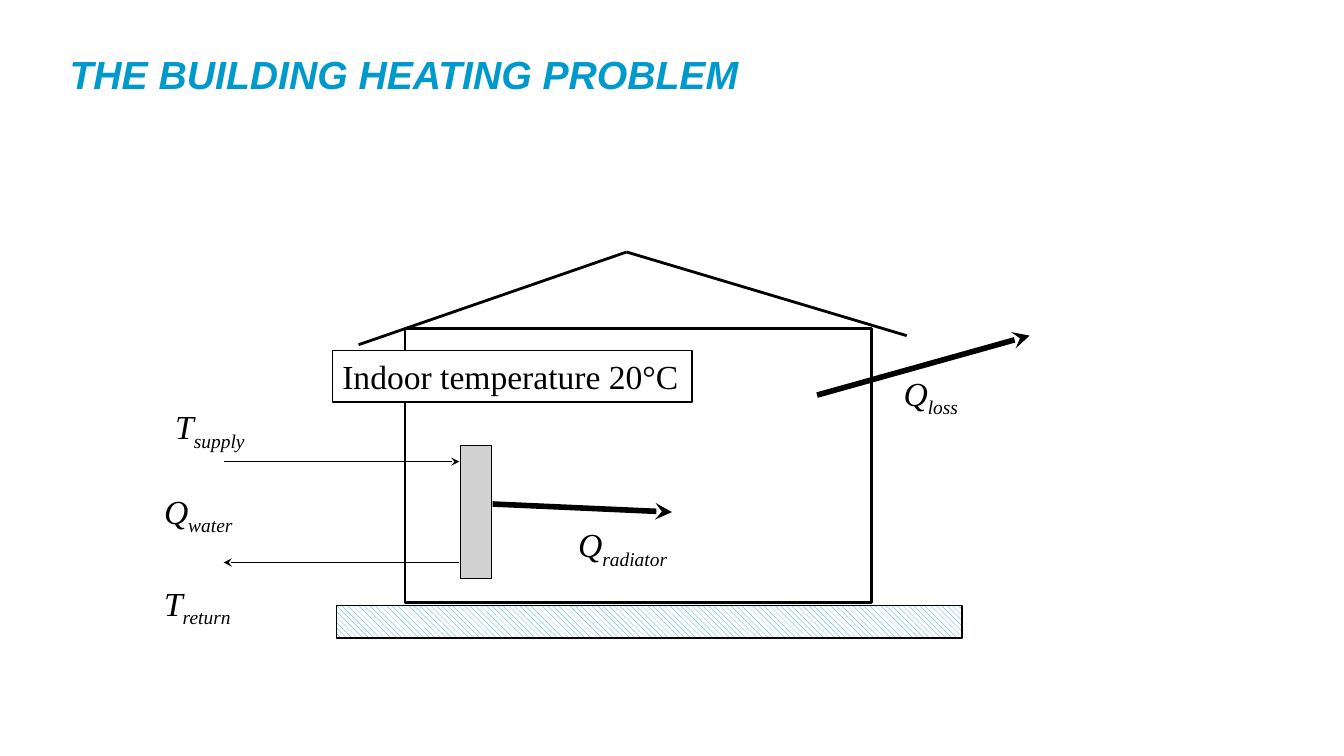
"""Build the slide that shows the heat flows of a heated building."""
from pptx import Presentation
from pptx import util as u
from pptx.dml import color
from pptx.enum import dml, shapes, text
from pptx.oxml import ns
from lxml import etree

EMU_PER_PX = 9144
COLORS = {"title": "0099CC", "ink": "000000", "paper": "FFFFFF", "radiator": "D2D2D2"}
SERIF = "Times New Roman"


def px(length):
    return u.Emu(length * EMU_PER_PX)


def rgb(name):
    return color.RGBColor.from_string(COLORS[name])


def format_font(font, name, size, color_name, italic):
    font.name = name
    font.size = u.Pt(size)
    font.color.rgb = rgb(color_name)
    font.italic = italic


def set_line(line, width):
    line.color.rgb = rgb("ink")
    line.width = u.Pt(width)


def add_title(slide, wording):
    title = slide.shapes.title
    title.left, title.top, title.width, title.height = map(px, (59, 45, 1217, 57))
    title.text_frame.text = wording
    title.text_frame.vertical_anchor = text.MSO_ANCHOR.MIDDLE
    paragraph = title.text_frame.paragraphs[0]
    paragraph.alignment = text.PP_ALIGN.LEFT
    font = paragraph.runs[0].font
    format_font(font, "Arial", 28, "title", True)
    font.bold = True


def add_box(slide, left, top, width, height, line_width, fill="paper"):
    box = slide.shapes.add_shape(
        shapes.MSO_SHAPE.RECTANGLE, px(left), px(top), px(width), px(height))
    box.shadow.inherit = False
    box.fill.solid()
    box.fill.fore_color.rgb = rgb(fill)
    set_line(box.line, line_width)
    return box


def add_ground(slide, left, top, width, height):
    ground = add_box(slide, left, top, width, height, 1)
    ground.fill.patterned()
    ground.fill.pattern = dml.MSO_PATTERN.WIDE_DOWNWARD_DIAGONAL
    ground.fill.fore_color.rgb = rgb("title")
    ground.fill.back_color.rgb = rgb("paper")


def add_line(slide, start, end, width, arrow=False):
    connector = slide.shapes.add_connector(
        shapes.MSO_CONNECTOR.STRAIGHT, *map(px, start + end))
    set_line(connector.line, width)
    if arrow:
        line_element = connector.line._get_or_add_ln()
        etree.SubElement(line_element, ns.qn("a:tailEnd"), type="stealth")
    etree.SubElement(connector._element.spPr, ns.qn("a:effectLst"))


def write_text(shape, wording, italic=False):
    frame = shape.text_frame
    frame.word_wrap = False
    frame.vertical_anchor = text.MSO_ANCHOR.TOP
    frame.text = wording
    paragraph = frame.paragraphs[0]
    paragraph.alignment = text.PP_ALIGN.LEFT
    format_font(paragraph.runs[0].font, SERIF, 24, "ink", italic)
    return paragraph


def add_symbol(slide, letter, subscript, left, top, width):
    label = slide.shapes.add_textbox(px(left), px(top), px(width), px(51))
    run = write_text(label, letter, italic=True).add_run()
    run.text = subscript
    format_font(run.font, SERIF, 24, "ink", True)
    run._r.get_or_add_rPr().set("baseline", "-25000")


def main():
    presentation = Presentation()
    presentation.slide_width, presentation.slide_height = px(1334), px(750)
    slide = presentation.slides.add_slide(presentation.slide_layouts[5])
    add_title(slide, "THE BUILDING HEATING PROBLEM")

    add_box(slide, 402, 326, 463, 272, 2)
    ridge = (622, 250)
    for eave in ((356, 342), (900, 333)):
        add_line(slide, ridge, eave, 2)
    add_ground(slide, 334, 601, 621, 32)
    add_box(slide, 457, 442, 31, 132, 1, "radiator")

    for start, end, width in (
        ((222, 458), (456, 458), 1),
        ((456, 558), (222, 558), 1),
        ((811, 392), (1022, 333), 4),
        ((489, 500), (667, 508), 4),
    ):
        add_line(slide, start, end, width, arrow=True)

    for letter, subscript, left, top, width in (
        ("Q", "water", 153, 482, 96),
        ("Q", "radiator", 564, 515, 120),
        ("Q", "loss", 887, 365, 80),
        ("T", "supply", 164, 398, 95),
        ("T", "return", 153, 573, 93),
    ):
        add_symbol(slide, letter, subscript, left, top, width)
    write_text(add_box(slide, 330, 348, 357, 51, 1), "Indoor temperature 20°C")

    presentation.save("out.pptx")


if __name__ == "__main__":
    main()
